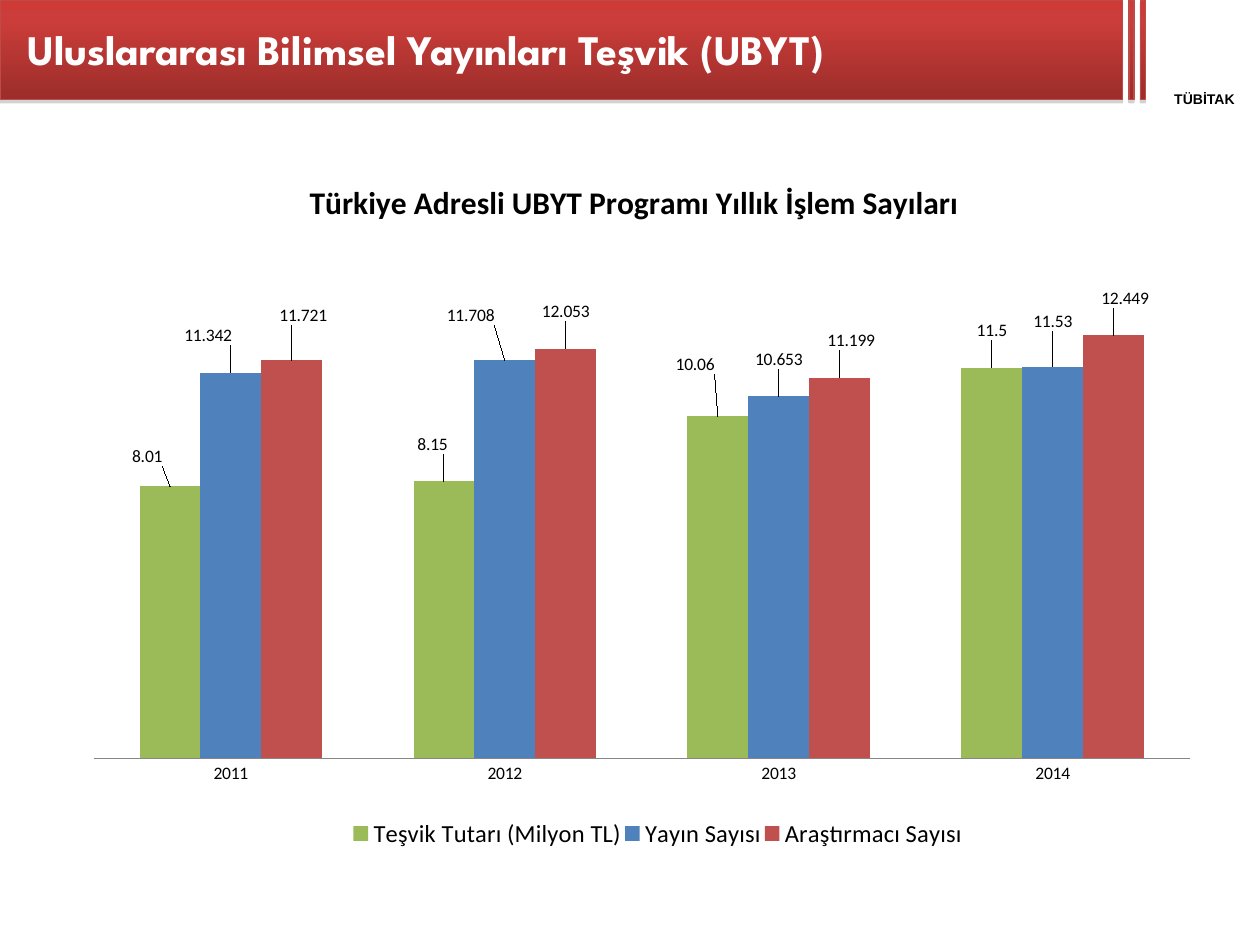
from pptx import Presentation
from pptx.chart.data import CategoryChartData
from pptx.dml.color import RGBColor
from pptx.enum.chart import XL_CHART_TYPE, XL_LABEL_POSITION, XL_LEGEND_POSITION, XL_TICK_MARK
from pptx.enum.shapes import MSO_SHAPE
from pptx.enum.text import MSO_ANCHOR, PP_ALIGN
from pptx.oxml import parse_xml
from pptx.oxml.ns import nsdecls, qn
from pptx.util import Inches, Pt

COLUMNS = XL_CHART_TYPE.COLUMN_CLUSTERED
OUTSIDE_END = XL_LABEL_POSITION.OUTSIDE_END
LEGEND_TOP = XL_LEGEND_POSITION.TOP
NO_TICKS = XL_TICK_MARK.NONE
RECTANGLE = MSO_SHAPE.RECTANGLE
MIDDLE, TOP = MSO_ANCHOR.MIDDLE, MSO_ANCHOR.TOP
LEFT, CENTER = PP_ALIGN.LEFT, PP_ALIGN.CENTER

BAND_GRADIENT = [(0, "CE3B37"), (20, "CB3D3A"), (100, "9B2D2A")]
BAND_HEIGHT = 0.79
YEARS = ["2011", "2012", "2013", "2014"]
# name, colour, values, label shifts as fractions of the chart size
SERIES = [
    ("Teşvik Tutarı (Milyon TL)", "9BBB59", [8.01, 8.15, 10.06, 11.5],
     [(-0.02, -0.02), (-0.01, -0.03), (-0.02, -0.05), (0, -0.03)]),
    ("Yayın Sayısı", "4F81BD", [11.342, 11.708, 10.653, 11.53],
     [(-0.02, -0.03), (-0.03, -0.04), (0, -0.03), (0, -0.04)]),
    ("Araştırmacı Sayısı", "C0504D", [11.721, 12.053, 11.199, 12.449],
     [(0.01, -0.04), (0, -0.03), (0.01, -0.03), (0.01, -0.03)]),
]


def rgb(hex_color):
    return RGBColor.from_string(hex_color)


def style_font(font, name, size, color="000000", bold=False):
    font.name, font.size, font.bold = name, Pt(size), bold
    font.color.rgb = rgb(color)


def add_band(slide, left, width):
    """Add a red gradient bar with a soft shadow below it."""
    band = slide.shapes.add_shape(
        RECTANGLE, Inches(left), 0, Inches(width), Inches(BAND_HEIGHT))
    band.line.color.rgb = rgb("BE4B48")
    band.line.width = Pt(0.75)
    stops = "".join(
        f'<a:gs pos="{position * 1000}"><a:srgbClr val="{color}"/></a:gs>'
        for position, color in BAND_GRADIENT)
    properties = band.element.spPr
    properties.find(qn("a:prstGeom")).addnext(parse_xml(
        f'<a:gradFill {nsdecls("a")} rotWithShape="1"><a:gsLst>{stops}</a:gsLst>'
        '<a:lin ang="5400000" scaled="0"/></a:gradFill>'))
    properties.append(parse_xml(
        f'<a:effectLst {nsdecls("a")}>'
        f'<a:outerShdw blurRad="0" dist="{Pt(1.8)}" dir="5400000" rotWithShape="0">'
        '<a:srgbClr val="808080"><a:alpha val="35000"/></a:srgbClr>'
        '</a:outerShdw></a:effectLst>'))


def add_text(slide, text, box, font, align=LEFT, anchor=TOP, inset=None):
    frame = slide.shapes.add_textbox(*map(Inches, box)).text_frame
    frame.word_wrap = True
    frame.vertical_anchor = anchor
    if inset is not None:
        frame.margin_left = frame.margin_right = Inches(inset)
        frame.margin_top = frame.margin_bottom = Inches(inset)
    paragraph = frame.paragraphs[0]
    paragraph.text = text
    paragraph.alignment = align
    style_font(paragraph.font, **font)


def set_layout(parent, after=None, modes=(), **fractions):
    """Place a chart part by fractions of the chart size."""
    for old in parent.findall(qn("c:layout")):
        parent.remove(old)
    settings = [*modes, *fractions.items()]
    entries = "".join(f'<c:{tag} val="{value}"/>' for tag, value in settings)
    layout = parse_xml(
        f'<c:layout {nsdecls("c")}><c:manualLayout>{entries}</c:manualLayout></c:layout>')
    if after:
        parent.find(qn(after)).addnext(layout)
    else:
        parent.insert(0, layout)


def style_series(series, color, shifts):
    series.format.fill.solid()
    series.format.fill.fore_color.rgb = rgb(color)
    labels = series.data_labels
    labels.show_value = True
    labels.position = OUTSIDE_END
    for index in range(len(shifts)):
        series.points[index].data_label.position = OUTSIDE_END
    for label, (x, y) in zip(series._element.iter(qn("c:dLbl")), shifts):
        set_layout(label, "c:idx", x=x, y=y)


def add_yearly_chart(slide):
    chart_data = CategoryChartData()
    chart_data.categories = YEARS
    for name, _, values, _ in SERIES:
        chart_data.add_series(name, values)
    chart = slide.shapes.add_chart(
        COLUMNS, Inches(0.51), Inches(1.15), Inches(9.06), Inches(5.91), chart_data).chart
    style_font(chart.font, "Calibri", 10)

    edges = [("xMode", "edge"), ("yMode", "edge")]
    title = chart.chart_title
    title.text_frame.text = "Türkiye Adresli UBYT Programı Yıllık İşlem Sayıları"
    style_font(title.text_frame.paragraphs[0].font, "Calibri", 18, bold=True)
    set_layout(title._element, "c:tx", edges, x=0.21, y=0.04)

    chart.has_legend = True
    legend = chart.legend
    legend.position = LEGEND_TOP
    legend.include_in_layout = False
    style_font(legend.font, "Calibri", 14)
    set_layout(legend._element, "c:legendPos", edges, x=0.25, y=0.9, w=0.54, h=0.05)

    years = chart.category_axis
    years.major_tick_mark = NO_TICKS
    years.format.line.color.rgb = rgb("868686")
    amounts = chart.value_axis
    amounts.visible = False
    amounts.has_major_gridlines = False
    amounts.minimum_scale, amounts.maximum_scale = 0, 14

    plot = chart.plots[0]
    plot.gap_width, plot.overlap = 150, 0
    plot.vary_by_categories = False
    for series, (_, color, _, shifts) in zip(plot.series, SERIES):
        style_series(series, color, shifts)
    plot_area = chart._chartSpace.chart.plotArea
    set_layout(plot_area, modes=[("layoutTarget", "inner"), *edges],
               x=0.026, y=0.185, w=0.96, h=0.639)


def main():
    presentation = Presentation()
    presentation.slide_width, presentation.slide_height = Inches(10), Inches(7.5)
    slide = presentation.slides.add_slide(presentation.slide_layouts[6])
    for left, width in [(0, 8.91), (8.96, 0.04), (9.05, 0.04)]:
        add_band(slide, left, width)
    add_text(slide, "TÜBİTAK", (9.05, 0.72, 1.02, 0.13),
             dict(name="Arial", size=8, bold=True), align=CENTER, inset=0)
    add_text(slide, "Uluslararası Bilimsel Yayınları Teşvik (UBYT)", (0.12, 0, 8.82, 0.77),
             dict(name="League Spartan", size=24, color="FFFFFF", bold=True), anchor=MIDDLE)
    add_yearly_chart(slide)
    presentation.save("out.pptx")


if __name__ == "__main__":
    main()
